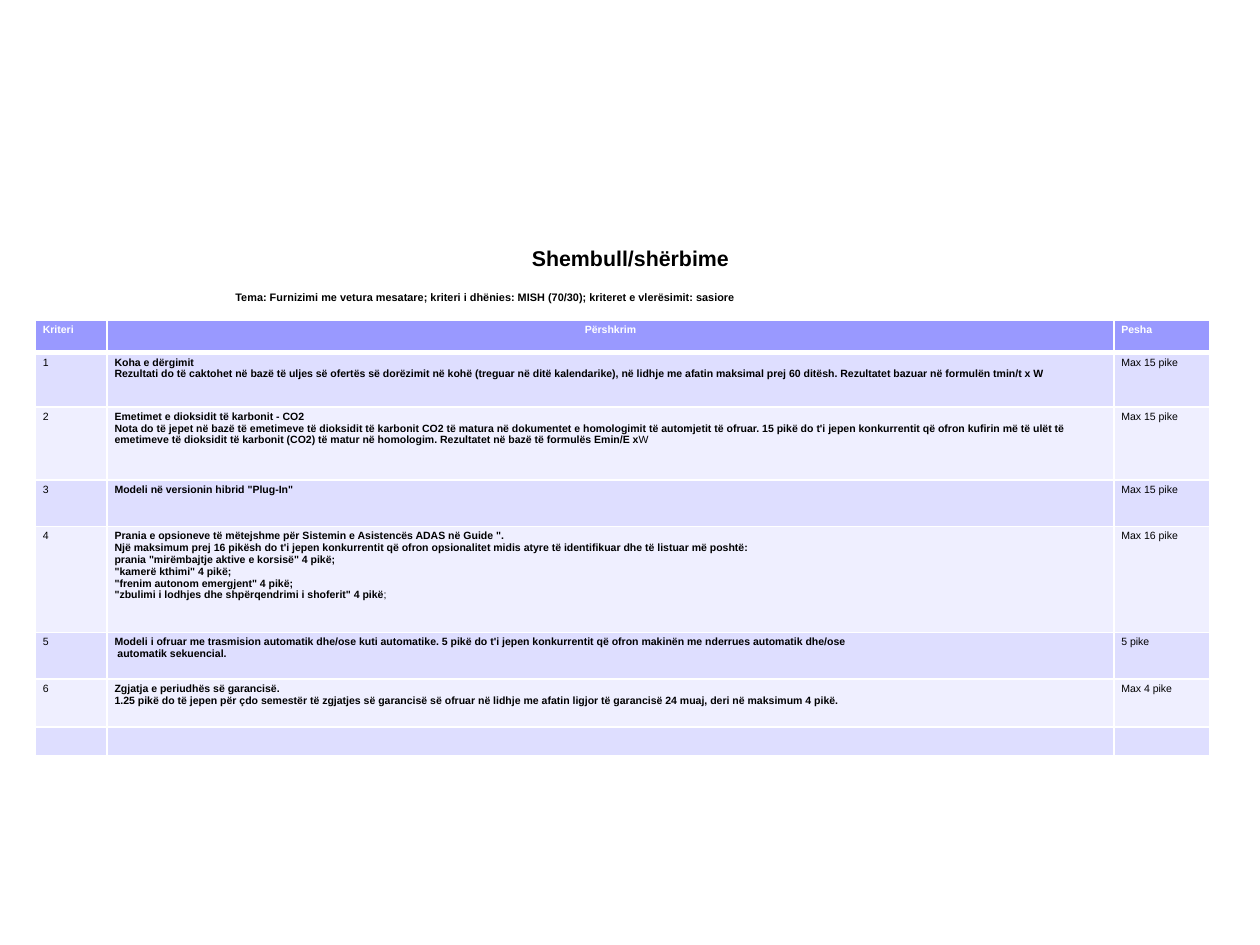
from lxml import etree
from pptx import Presentation
from pptx.dml.color import RGBColor
from pptx.enum.text import MSO_ANCHOR, PP_ALIGN
from pptx.oxml.ns import qn
from pptx.util import Inches, Pt

FONT = "Arial"
BLACK = "000000"
WHITE = "FFFFFF"
HEADER_FILL = "9999FF"
BAND_FILLS = ["DEDEFF", "EFEFFF"]
TABLE_SIZE = 6
COLUMN_WIDTHS = [0.57, 7.99, 0.76]
ROW_HEIGHTS = [0.26, 0.43, 0.58, 0.37, 0.84, 0.37, 0.38, 0.23]
HEADINGS = ["Kriteri", "Përshkrim", "Pesha"]
CRITERIA = [
    ("Max 15 pike", [
        "Koha e dërgimit",
        "Rezultati do të caktohet në bazë të uljes së ofertës së dorëzimit në kohë "
        "(treguar në ditë kalendarike), në lidhje me afatin maksimal prej 60 ditësh. "
        "Rezultatet bazuar në formulën tmin/t x W",
    ], ""),
    ("Max 15 pike", [
        "Emetimet e dioksidit të karbonit - CO2",
        "Nota do të jepet në bazë të emetimeve të dioksidit të karbonit CO2 të matura në "
        "dokumentet e homologimit të automjetit të ofruar. 15 pikë do t'i jepen konkurrentit "
        "që ofron kufirin më të ulët të emetimeve të dioksidit të karbonit (CO2) të matur në "
        "homologim. Rezultatet në bazë të formulës Emin/E x",
    ], "W"),
    ("Max 15 pike", ['Modeli në versionin hibrid "Plug-In"'], ""),
    ("Max 16 pike", [
        'Prania e opsioneve të mëtejshme për Sistemin e Asistencës ADAS në Guide ".',
        "Një maksimum prej 16 pikësh do t'i jepen konkurrentit që ofron opsionalitet midis "
        "atyre të identifikuar dhe të listuar më poshtë:",
        'prania "mirëmbajtje aktive e korsisë" 4 pikë;',
        '"kamerë kthimi" 4 pikë;',
        '"frenim autonom emergjent" 4 pikë;',
        '"zbulimi i lodhjes dhe shpërqendrimi i shoferit" 4 pikë',
    ], ";"),
    ("5 pike", [
        "Modeli i ofruar me trasmision automatik dhe/ose kuti automatike. 5 pikë do t'i jepen "
        "konkurrentit që ofron makinën me nderrues automatik dhe/ose",
        " automatik sekuencial.",
    ], ""),
    ("Max 4 pike", [
        "Zgjatja e periudhës së garancisë.",
        "1.25 pikë do të jepen për çdo semestër të zgjatjes së garancisë së ofruar në lidhje "
        "me afatin ligjor të garancisë 24 muaj, deri në maksimum 4 pikë.",
    ], ""),
]


def color(value):
    return RGBColor.from_string(value)


def add_text(paragraph, text, size=TABLE_SIZE, fill=BLACK, bold=False, align=PP_ALIGN.LEFT):
    paragraph.alignment = align
    run = paragraph.add_run()
    run.text = text
    run.font.name = FONT
    run.font.size = Pt(size)
    run.font.bold = bold
    run.font.color.rgb = color(fill)


def add_text_box(slide, left, top, width, height, text, anchor, bottom, **text_format):
    frame = slide.shapes.add_textbox(
        Inches(left), Inches(top), Inches(width), Inches(height)).text_frame
    frame.word_wrap = True
    frame.vertical_anchor = anchor
    frame.margin_bottom = Inches(bottom)
    add_text(frame.paragraphs[0], text, **text_format)


def add_borders(cell, widths):
    properties = cell._tc.get_or_add_tcPr()
    for side, width in zip(("lnL", "lnR", "lnT", "lnB"), widths):
        line = etree.SubElement(properties, qn(f"a:{side}"), w=str(Pt(width)))
        solid = etree.SubElement(line, qn("a:solidFill"))
        etree.SubElement(solid, qn("a:srgbClr"), val=WHITE)


def style_cell(cell, row):
    cell.margin_left = cell.margin_right = Inches(0.06)
    cell.margin_top = cell.margin_bottom = Inches(0.03)
    add_borders(cell, (1, 1, 3 if row == 1 else 1, 3 if row == 0 else 1))
    cell.fill.solid()
    cell.fill.fore_color.rgb = color(BAND_FILLS[(row - 1) % 2] if row else HEADER_FILL)


def set_empty_size(cell):
    paragraph = cell.text_frame.paragraphs[0]
    etree.SubElement(paragraph._p, qn("a:endParaRPr"), sz=str(TABLE_SIZE * 100))


def add_description(cell, lines, ending):
    frame = cell.text_frame
    for index, line in enumerate(lines):
        paragraph = frame.add_paragraph() if index else frame.paragraphs[0]
        add_text(paragraph, line, bold=True)
    if ending:
        add_text(paragraph, ending)


def add_criteria_table(slide):
    table = slide.shapes.add_table(
        len(ROW_HEIGHTS), len(COLUMN_WIDTHS), Inches(0.28), Inches(2.54),
        Inches(sum(COLUMN_WIDTHS)), Inches(sum(ROW_HEIGHTS))).table
    for column, width in zip(table.columns, COLUMN_WIDTHS):
        column.width = Inches(width)
    for index, height in enumerate(ROW_HEIGHTS):
        table.rows[index].height = Inches(height)
        for cell in table.rows[index].cells:
            style_cell(cell, index)
    for index, heading in enumerate(HEADINGS):
        align = PP_ALIGN.CENTER if index == 1 else PP_ALIGN.LEFT
        add_text(table.cell(0, index).text_frame.paragraphs[0], heading,
                 fill=WHITE, bold=True, align=align)
    for number, (weight, lines, ending) in enumerate(CRITERIA, start=1):
        add_text(table.cell(number, 0).text_frame.paragraphs[0], str(number))
        add_description(table.cell(number, 1), lines, ending)
        add_text(table.cell(number, 2).text_frame.paragraphs[0], weight)
    for cell in table.rows[len(ROW_HEIGHTS) - 1].cells:
        set_empty_size(cell)


def main():
    presentation = Presentation()
    presentation.slide_width = Inches(10)
    presentation.slide_height = Inches(7.5)
    slide = presentation.slides.add_slide(presentation.slide_layouts[6])
    add_text_box(slide, 1.77, 1.88, 6.47, 0.27, "Shembull/shërbime",
                 MSO_ANCHOR.BOTTOM, 0, size=12.2, bold=True, align=PP_ALIGN.CENTER)
    add_text_box(slide, 1.77, 2.26, 6.47, 3.14,
                 "Tema: Furnizimi me vetura mesatare; kriteri i dhënies: MISH (70/30); "
                 "kriteret e vlerësimit: sasiore",
                 MSO_ANCHOR.TOP, 0.05, size=6.2, bold=True)
    add_criteria_table(slide)
    presentation.save("out.pptx")


if __name__ == "__main__":
    main()
